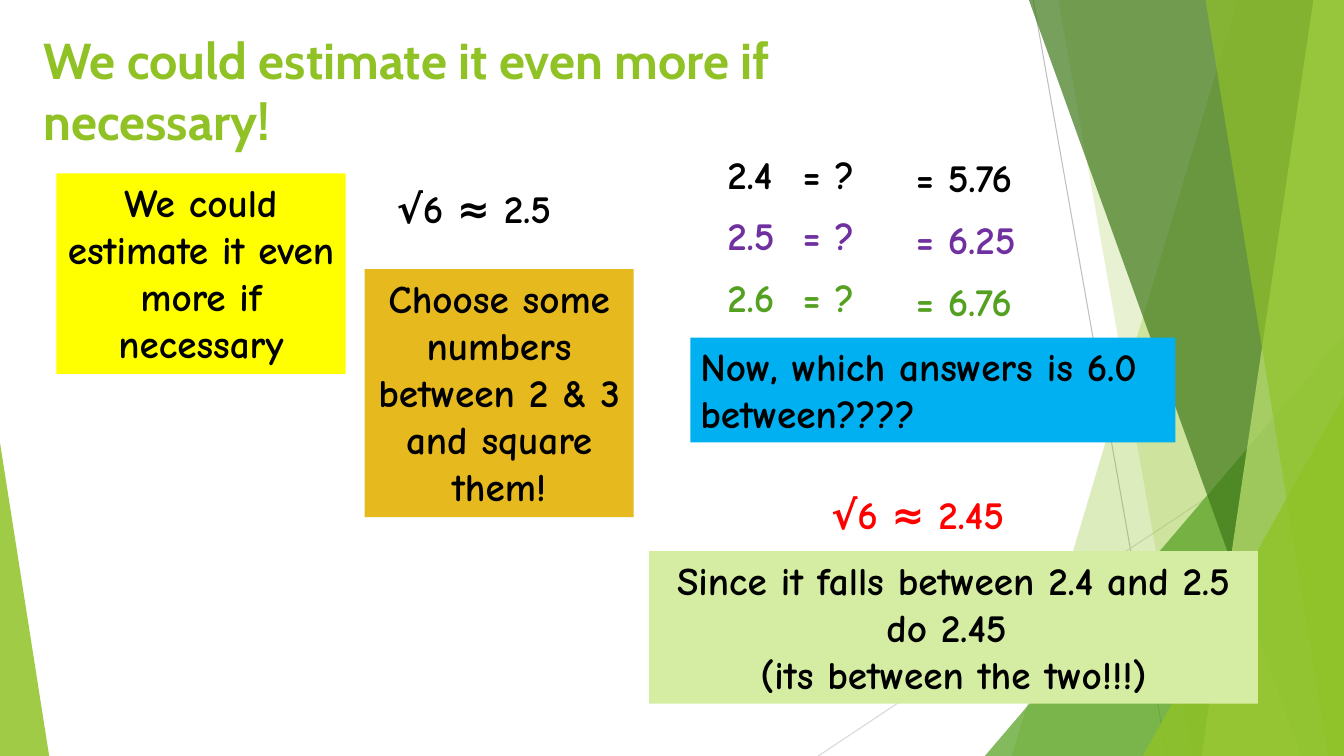
from dataclasses import dataclass
from lxml.etree import SubElement
from pptx import Presentation
from pptx.dml.color import RGBColor
from pptx.enum.shapes import MSO_CONNECTOR, MSO_SHAPE
from pptx.enum.text import MSO_ANCHOR, MSO_AUTO_SIZE, PP_ALIGN
from pptx.oxml.ns import qn
from pptx.util import Cm, Pt


@dataclass(frozen=True)
class Theme:
    lime: str = "90C226"
    leaf: str = "54A021"
    forest: str = "3F7819"
    pale: str = "C0E474"
    mint: str = "D5EDA2"
    yellow: str = "FFFF00"
    gold: str = "E6B91E"
    sky: str = "00B0F0"
    purple: str = "7030A0"
    red: str = "FF0000"
    black: str = "000000"
    grey: str = "BFBFBF"
    silver: str = "D9D9D9"
    title_font: str = "Cabin"
    body_font: str = "Comic Neue"
    title_size: int = 36
    body_size: int = 28


def paint(sp, color, alpha=100):
    sp.shadow.inherit = False
    sp.fill.solid()
    sp.fill.fore_color.rgb = RGBColor.from_string(color)
    sp.line.fill.background()
    if alpha < 100:
        clr = sp.fill._xPr.find(qn("a:solidFill"))[0]
        SubElement(clr, qn("a:alpha")).set("val", str(alpha * 1000))


def write(tf, text, font, size, color, align=PP_ALIGN.LEFT):
    tf.word_wrap = True
    tf.text = text
    for p in tf.paragraphs:
        p.alignment = align
        for r in p.runs:
            r.font.name = font
            r.font.size = Pt(size)
            r.font.bold = True
            r.font.color.rgb = RGBColor.from_string(color)


T = Theme()
W, H = 33.87, 19.05
prs = Presentation()
prs.slide_width, prs.slide_height = Cm(W), Cm(H)
slide = prs.slides.add_slide(prs.slide_layouts[5])
shapes = slide.shapes

title = shapes.title
title.left, title.top, title.width, title.height = Cm(0.84), Cm(0.43), Cm(23.88), Cm(3.66)
write(title.text_frame, "We could estimate it even more if necessary!",
      T.title_font, T.title_size, T.lime)
title.text_frame.auto_size = MSO_AUTO_SIZE.NONE
title.text_frame.vertical_anchor = MSO_ANCHOR.MIDDLE

for x1, y1, x2, y2, color in [
    (26.04, 0, 29.41, H, T.grey),
    (W, 10.24, 20.62, H, T.silver),
]:
    line = shapes.add_connector(MSO_CONNECTOR.STRAIGHT, Cm(x1), Cm(y1), Cm(x2), Cm(y2))
    line.line.color.rgb = RGBColor.from_string(color)
    line.line.width = Pt(0.75)
    SubElement(line._element.spPr, qn("a:effectLst"))

facets = [
    ("slab", (31.19, 25.5), T.lime, 30),
    ("slab", (26.67, 30.05), T.lime, 20),
    ("right", (24.82, 9.04, 10.59), T.leaf, 72),
    ("slab", (25.93, 32.79), T.forest, 70),
    ("slab", (33.1, 30.28), T.pale, 70),
    ("slab", (30.38, 33.48), T.lime, 65),
    ("right", (28.8, 5.07, 9.07), T.lime, 80),
    ("left", (0, 1.24, 7.9), T.lime, 85),
]
for kind, dims, color, alpha in facets:
    if kind == "slab":
        top_x, bottom_x = dims
        fb = shapes.build_freeform(Cm(top_x), 0)
        fb.add_line_segments([(Cm(W), 0), (Cm(W), Cm(H)), (Cm(bottom_x), Cm(H))])
        sp = fb.convert_to_shape()
    else:
        x, w, h = dims
        sp = shapes.add_shape(MSO_SHAPE.ISOSCELES_TRIANGLE, Cm(x), Cm(H - h), Cm(w), Cm(h))
        sp.adjustments[0] = 1 if kind == "right" else 0
    paint(sp, color, alpha)

for text, x, y, w, h, color, align in [
    ("We could estimate it even more if necessary",
     1.42, 4.37, 7.29, 5.05, T.yellow, PP_ALIGN.CENTER),
    ("Choose some numbers between 2 & 3 and square them!",
     9.19, 6.78, 6.78, 6.25, T.gold, PP_ALIGN.CENTER),
    ("Now, which answers is 6.0 between????",
     17.4, 8.51, 12.22, 2.64, T.sky, PP_ALIGN.LEFT),
    ("Since it falls between 2.4 and 2.5 do 2.45 \n(its between the two!!!)",
     16.36, 13.89, 15.34, 3.84, T.mint, PP_ALIGN.CENTER),
]:
    sp = shapes.add_shape(MSO_SHAPE.RECTANGLE, Cm(x), Cm(y), Cm(w), Cm(h))
    paint(sp, color)
    write(sp.text_frame, text, T.body_font, T.body_size, T.black, align)
    sp.text_frame.vertical_anchor = MSO_ANCHOR.TOP

labels = [
    ("√6 ≈ 2.5", 9.75, 4.52, 5.64, T.black),
    ("√6 ≈ 2.45", 20.7, 12.24, 5.59, T.red),
]
for i, (number, square, color) in enumerate([
    ("2.4", "5.76", T.black),
    ("2.5", "6.25", T.purple),
    ("2.6", "6.76", T.leaf),
]):
    labels.append((f"{number}\t= ?", 18.08, 3.66 + 1.55 * i, 5.64, color))
    labels.append((f"= {square}", 22.83, 3.73 + 1.57 * i, 3.89, color))

for text, x, y, w, color in labels:
    tf = shapes.add_textbox(Cm(x), Cm(y), Cm(w), Cm(1.45)).text_frame
    write(tf, text, T.body_font, T.body_size, color)
    if "\t" in text:
        tabs = SubElement(tf.paragraphs[0]._p.get_or_add_pPr(), qn("a:tabLst"))
        tab = SubElement(tabs, qn("a:tab"))
        tab.set("pos", str(Cm(1.9)))
        tab.set("algn", "l")

prs.save("out.pptx")
